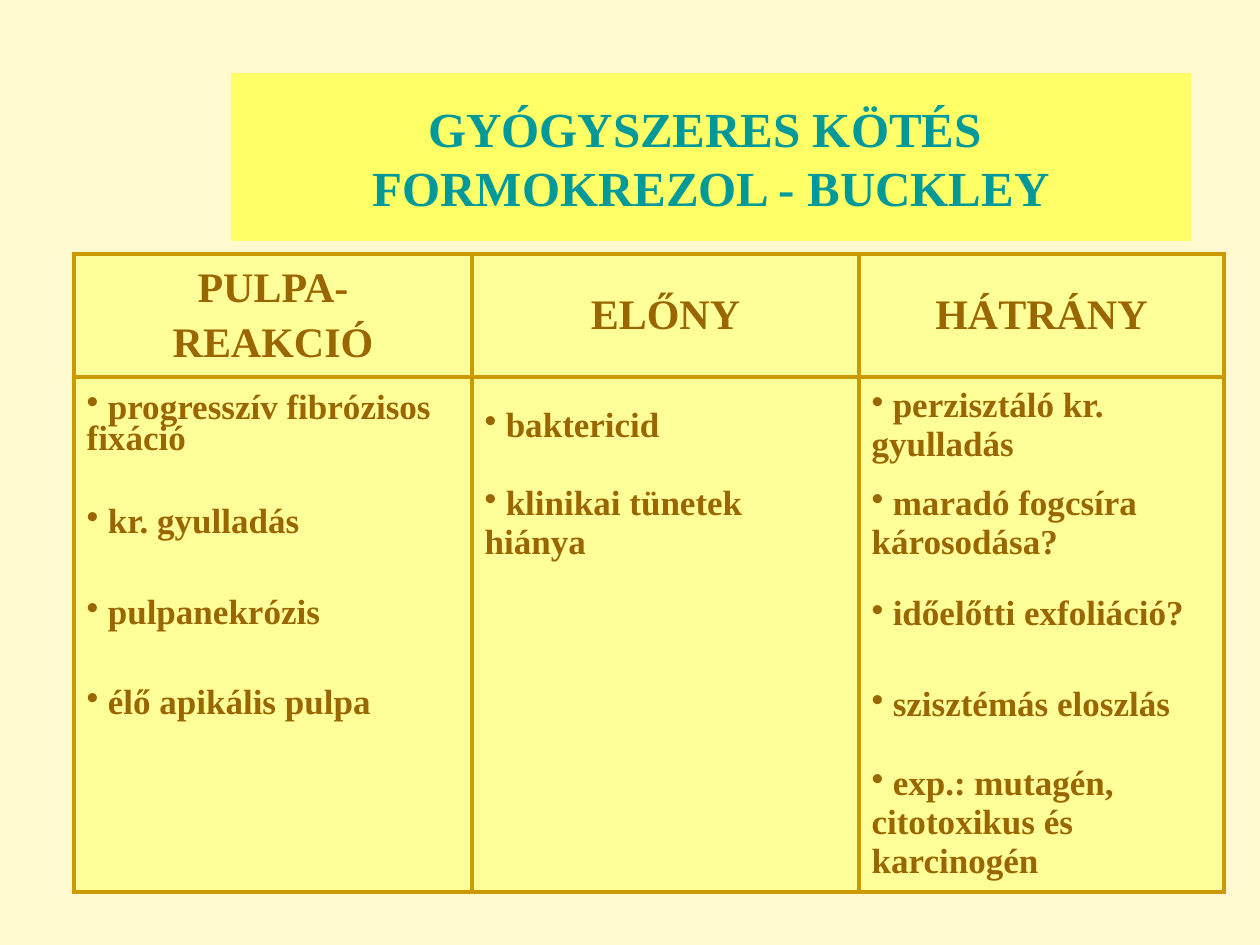
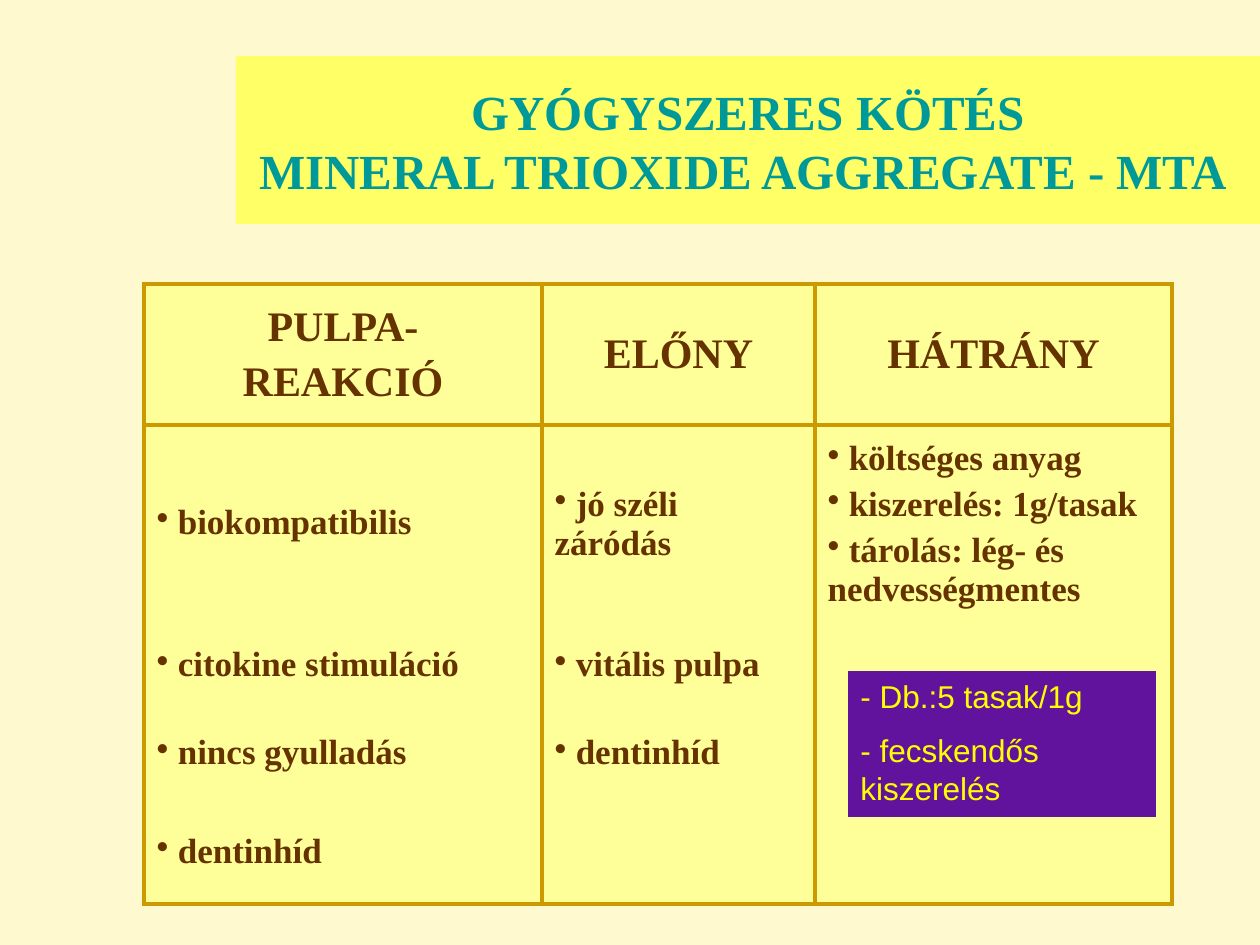
from dataclasses import dataclass
from typing import Optional

from pptx import Presentation
from pptx.dml.color import RGBColor
from pptx.enum.text import MSO_ANCHOR as ANCHOR, MSO_AUTO_SIZE as AUTO, PP_ALIGN as ALIGN
from pptx.oxml import parse_xml
from pptx.oxml.ns import nsdecls, qn
from pptx.util import Emu, Pt

# Shared look
CREAM = RGBColor(0xFF, 0xF9, 0xCF)
TITLE_BAND = RGBColor(0xFF, 0xFF, 0x66)
CELL_FILL = RGBColor(0xFF, 0xFF, 0x99)
TEAL = RGBColor(0x00, 0x99, 0x99)
GOLD = RGBColor(0xCC, 0x99, 0x00)
OCHRE = RGBColor(0x99, 0x66, 0x00)
BROWN = RGBColor(0x66, 0x33, 0x00)
PURPLE = RGBColor(0x62, 0x13, 0x9E)
YELLOW = RGBColor(0xFF, 0xFF, 0x00)
SERIF, SANS = "Times New Roman", "Arial"
TITLE_ONLY = 5
EMU_PER_PX = 914400 / 126
HEADERS = (("PULPA-", "REAKCIÓ"), ("ELŐNY",), ("HÁTRÁNY",))

Cell = tuple[str, ...]


@dataclass(frozen=True)
class Box:
    left: int
    top: int
    width: int
    height: int

    def emu(self) -> tuple[Emu, ...]:
        return tuple(px(v) for v in (self.left, self.top, self.width, self.height))


@dataclass(frozen=True)
class Note:
    box: Box
    lines: Cell


@dataclass(frozen=True)
class Comparison:
    title: tuple[str, str]
    title_box: Box
    left: int
    top: int
    cols: tuple[int, ...]
    rows: tuple[int, ...]
    text_color: RGBColor
    first_col_spacing: tuple[float, ...]
    body: tuple[tuple[Cell, Cell, Cell], ...]
    note: Optional[Note] = None


COMPARISONS = (
    Comparison(
        title=("GYÓGYSZERES KÖTÉS ", "FORMOKREZOL - BUCKLEY"),
        title_box=Box(231, 73, 960, 168),
        left=74, top=254,
        cols=(398, 387, 365),
        rows=(123, 97, 98, 84, 97, 139),
        text_color=OCHRE,
        first_col_spacing=(0.8, 0.9, 0.9, 0.9, 1),
        body=(
            (("progresszív fibrózisos fixáció",), ("baktericid",),
             ("perzisztáló kr. gyulladás",)),
            (("kr. gyulladás",), ("klinikai tünetek hiánya",),
             ("maradó fogcsíra károsodása?",)),
            (("pulpanekrózis",), (), ("időelőtti exfoliáció?",)),
            (("élő apikális pulpa",), (), ("szisztémás eloszlás",)),
            ((), (), ("exp.: mutagén, citotoxikus és karcinogén",)),
        ),
    ),
    Comparison(
        title=("GYÓGYSZERES KÖTÉS", "MINERAL TRIOXIDE AGGREGATE - MTA "),
        title_box=Box(236, 56, 1024, 168),
        left=144, top=284,
        cols=(398, 273, 357),
        rows=(141, 198, 84, 92, 105),
        text_color=BROWN,
        first_col_spacing=(0.9, 1, 1, 1),
        body=(
            (("biokompatibilis",), ("jó széli záródás",),
             ("költséges anyag", "kiszerelés: 1g/tasak",
              "tárolás: lég- és nedvességmentes")),
            (("citokine stimuláció",), ("vitális pulpa",), ()),
            (("nincs gyulladás",), ("dentinhíd",), ()),
            (("dentinhíd",), (), ()),
        ),
        note=Note(Box(848, 671, 308, 146),
                  ("- Db.:5 tasak/1g", "- fecskendős kiszerelés")),
    ),
)


def px(value: int) -> Emu:
    return Emu(round(value * EMU_PER_PX))


def add_run(p, text: str, size: int, color: RGBColor, font: str = SERIF,
            bold: bool = True):
    r = p.add_run()
    r.text = text
    r.font.size, r.font.name, r.font.bold = Pt(size), font, bold
    r.font.color.rgb = color
    return r


def paragraphs(tf, lines: Cell, gap: float):
    """Yield one paragraph per line, with a gap before all but the first."""
    for i, line in enumerate(lines):
        p = tf.add_paragraph() if i else tf.paragraphs[0]
        if i:
            p.space_before = Pt(gap)
        yield p, line


def add_title(slide, spec: Comparison) -> None:
    sp = slide.shapes.title
    sp.left, sp.top, sp.width, sp.height = spec.title_box.emu()
    sp.fill.solid()
    sp.fill.fore_color.rgb = TITLE_BAND
    tf = sp.text_frame
    tf.auto_size, tf.word_wrap = AUTO.NONE, True
    tf.vertical_anchor = ANCHOR.MIDDLE
    p = tf.paragraphs[0]
    p.alignment = ALIGN.CENTER
    add_run(p, spec.title[0], 28, TEAL)
    p.add_line_break()
    # The break needs the run's size, or it takes the template's
    p._p.find(qn("a:br")).append(parse_xml(f'<a:rPr {nsdecls("a")} sz="2800" b="1"/>'))
    add_run(p, spec.title[1], 28, TEAL)


def set_borders(cell, sides: str) -> None:
    tc_pr = cell._tc.get_or_add_tcPr()
    for side in "LRTB":
        fill = (f'<a:solidFill><a:srgbClr val="{GOLD}"/></a:solidFill>'
                if side in sides else "<a:noFill/>")
        tc_pr.append(parse_xml(
            f'<a:ln{side} {nsdecls("a")} w="{Pt(3)}">{fill}</a:ln{side}>'))


def fill_header(cell, lines: Cell, color: RGBColor) -> None:
    for p, line in paragraphs(cell.text_frame, lines, 4.8):
        p.alignment = ALIGN.CENTER
        add_run(p, line, 24, color)


def fill_bullets(cell, lines: Cell, color: RGBColor, spacing: float) -> None:
    for p, line in paragraphs(cell.text_frame, lines, 4):
        if spacing != 1:
            p.line_spacing = spacing
        p_pr = p._p.get_or_add_pPr()
        p_pr.set("marL", "0")
        p_pr.set("indent", "0")
        p_pr.append(parse_xml(f'<a:buChar {nsdecls("a")} char="•"/>'))
        add_run(p, f" {line}", 20, color)


def add_comparison_table(slide, spec: Comparison) -> None:
    box = Box(spec.left, spec.top, sum(spec.cols), sum(spec.rows))
    tbl = slide.shapes.add_table(len(spec.rows), len(spec.cols), *box.emu()).table
    tbl.first_row = tbl.horz_banding = False
    for col, width in zip(tbl.columns, spec.cols):
        col.width = px(width)
    for row, height in zip(tbl.rows, spec.rows):
        row.height = px(height)

    last = len(spec.rows) - 1
    for i, texts in enumerate((HEADERS, *spec.body)):
        # Rules run around the header and the body, not between body rows
        sides = "LR" + ("T" if i <= 1 else "") + ("B" if i in (0, last) else "")
        for j, lines in enumerate(texts):
            cell = tbl.cell(i, j)
            set_borders(cell, sides)
            cell.fill.solid()
            cell.fill.fore_color.rgb = CELL_FILL
            cell.vertical_anchor = ANCHOR.MIDDLE
            if i == 0:
                fill_header(cell, lines, spec.text_color)
            else:
                spacing = 1 if j else spec.first_col_spacing[i - 1]
                fill_bullets(cell, lines, spec.text_color, spacing)


def add_note(slide, note: Note) -> None:
    sp = slide.shapes.add_textbox(*note.box.emu())
    sp.fill.solid()
    sp.fill.fore_color.rgb = PURPLE
    tf = sp.text_frame
    tf.word_wrap = True
    for p, line in paragraphs(tf, note.lines, 9):
        add_run(p, line, 18, YELLOW, SANS, bold=False)


def main() -> None:
    prs = Presentation()
    prs.slide_width, prs.slide_height = px(1260), px(945)
    background = prs.slide_master.background.fill
    background.solid()
    background.fore_color.rgb = CREAM

    for spec in COMPARISONS:
        slide = prs.slides.add_slide(prs.slide_layouts[TITLE_ONLY])
        add_title(slide, spec)
        add_comparison_table(slide, spec)
        if spec.note:
            add_note(slide, spec.note)
    prs.save("out.pptx")


if __name__ == "__main__":
    main()
